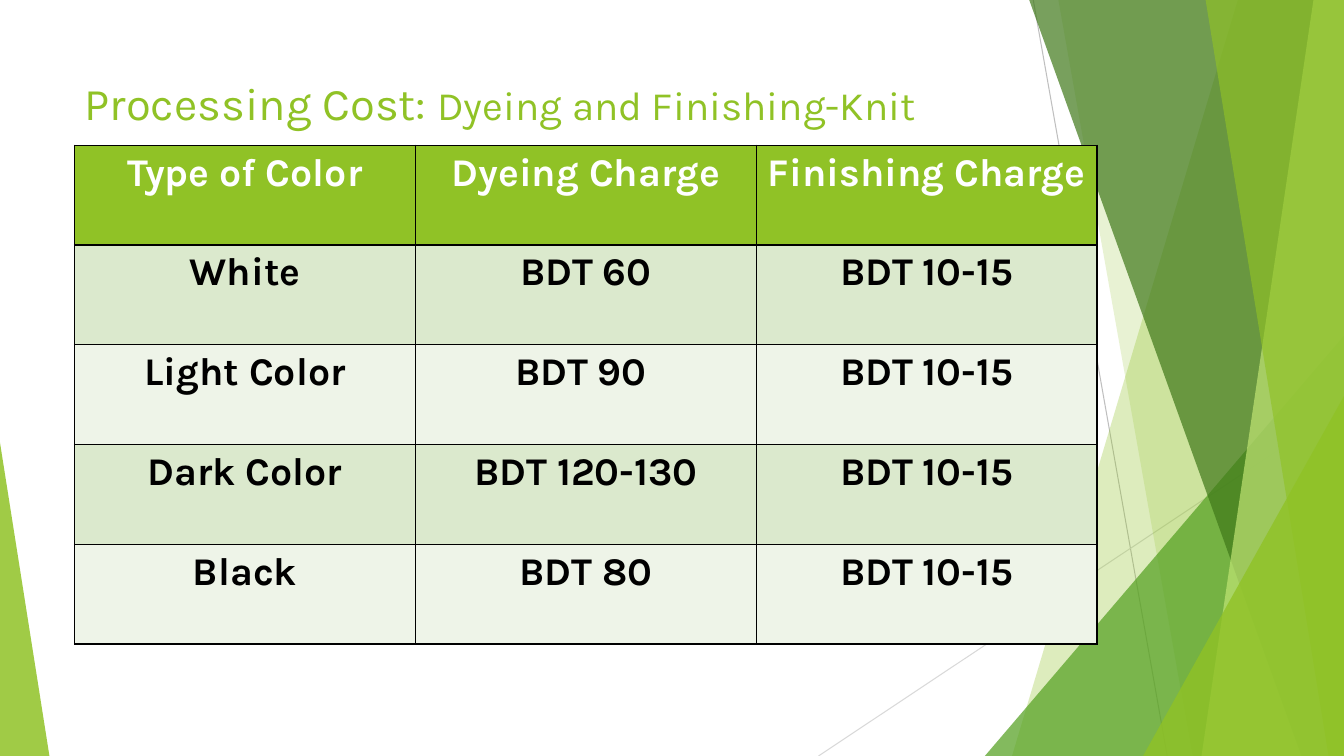
from lxml import etree
from pptx import Presentation, util as u
from pptx.dml.color import RGBColor
from pptx.enum import shapes, text
from pptx.oxml import ns

WHITE = RGBColor(0xFF, 0xFF, 0xFF)
BLACK = RGBColor(0x00, 0x00, 0x00)
LIME = RGBColor(0x90, 0xC2, 0x26)
PALE_LIME = RGBColor(0xC0, 0xE4, 0x74)
LEAF = RGBColor(0x54, 0xA0, 0x21)
FOREST = RGBColor(0x3F, 0x78, 0x19)
DARK_BAND = RGBColor(0xDB, 0xE9, 0xCD)
LIGHT_BAND = RGBColor(0xEE, 0xF4, 0xE8)
SILVER = RGBColor(0xBF, 0xBF, 0xBF)
MIST = RGBColor(0xD9, 0xD9, 0xD9)

CHARGES = [
    ("Type of Color", "Dyeing Charge", "Finishing Charge"),
    ("White", "BDT 60", "BDT 10-15"),
    ("Light Color", "BDT 90 ", "BDT 10-15"),
    ("Dark Color", "BDT 120-130", "BDT 10-15"),
    ("Black", "BDT 80", "BDT 10-15"),
]


class SlideBuilder:
    font_name = "Karla"

    def __init__(self, presentation):
        self.width = presentation.slide_width
        self.height = presentation.slide_height
        self.slide = presentation.slides.add_slide(presentation.slide_layouts[5])
        self.shapes = self.slide.shapes

    def x(self, percent):
        return u.Emu(round(self.width * percent / 100))

    def y(self, percent):
        return u.Emu(round(self.height * percent / 100))

    def box(self, left, top, width, height):
        return self.x(left), self.y(top), self.x(width), self.y(height)

    def paint(self, shape, color, opacity):
        shape.shadow.inherit = False
        shape.line.fill.background()
        shape.fill.solid()
        shape.fill.fore_color.rgb = color
        fill = shape.fill._xPr.find(ns.qn("a:solidFill"))
        etree.SubElement(fill[0], ns.qn("a:alpha"), val=str(opacity * 1000))

    def line(self, start, end, color):
        connector = self.shapes.add_connector(
            shapes.MSO_CONNECTOR.STRAIGHT,
            self.x(start[0]), self.y(start[1]), self.x(end[0]), self.y(end[1]))
        connector.line.color.rgb = color
        connector.line.width = u.Pt(0.75)
        etree.SubElement(connector._element.spPr, ns.qn("a:effectLst"))

    def ribbon(self, top_left, bottom_left, color, opacity):
        builder = self.shapes.build_freeform(self.x(top_left), 0)
        builder.add_line_segments([
            (self.width, 0), (self.width, self.height),
            (self.x(bottom_left), self.height)])
        self.paint(builder.convert_to_shape(), color, opacity)

    def triangle(self, left, top, width, apex, color, opacity):
        shape = self.shapes.add_shape(
            shapes.MSO_SHAPE.ISOSCELES_TRIANGLE, *self.box(left, top, width, 100 - top))
        shape.adjustments[0] = apex
        self.paint(shape, color, opacity)

    def run(self, paragraph, words, size, color, bold=False):
        run = paragraph.add_run()
        run.text = words
        run.font.name = self.font_name
        run.font.size = u.Pt(size)
        run.font.bold = bold
        run.font.color.rgb = color

    def title(self, box, pieces):
        title = self.shapes.title
        title.left, title.top, title.width, title.height = self.box(*box)
        frame = title.text_frame
        frame.word_wrap = True
        frame.auto_size = text.MSO_AUTO_SIZE.NONE
        frame.vertical_anchor = text.MSO_ANCHOR.BOTTOM
        frame.margin_bottom = u.Inches(0.01)
        paragraph = frame.paragraphs[0]
        paragraph.alignment = text.PP_ALIGN.LEFT
        for words, size in pieces:
            self.run(paragraph, words, size, LIME)
        self.shapes._spTree.append(title._element)

    def border(self, cell):
        properties = cell._tc.get_or_add_tcPr()
        for position, side in enumerate(("lnL", "lnR", "lnT", "lnB")):
            edge = etree.Element(ns.qn(f"a:{side}"), w=str(u.Pt(1)))
            fill = etree.SubElement(edge, ns.qn("a:solidFill"))
            etree.SubElement(fill, ns.qn("a:srgbClr"), val=str(BLACK))
            properties.insert(position, edge)

    def table(self, box, rows):
        table = self.shapes.add_table(len(rows), len(rows[0]), *self.box(*box)).table
        for row_index, row in enumerate(rows):
            header = row_index == 0
            fill = LIME if header else (LIGHT_BAND, DARK_BAND)[row_index % 2]
            for column_index, words in enumerate(row):
                cell = table.cell(row_index, column_index)
                cell.fill.solid()
                cell.fill.fore_color.rgb = fill
                self.border(cell)
                paragraph = cell.text_frame.paragraphs[0]
                paragraph.alignment = text.PP_ALIGN.CENTER
                self.run(paragraph, words, 28, WHITE if header else BLACK, True)


def main():
    presentation = Presentation()
    presentation.slide_width = u.Inches(13.33)
    presentation.slide_height = u.Inches(7.5)
    builder = SlideBuilder(presentation)

    builder.line((76.88, 0), (86.85, 100), SILVER)
    builder.line((100, 53.73), (60.9, 100), MIST)
    builder.ribbon(92.1, 75.3, LIME, 30)
    builder.ribbon(78.75, 88.73, LIME, 20)
    builder.triangle(73.28, 44.4, 26.72, 1, LEAF, 72)
    builder.ribbon(76.58, 96.83, FOREST, 70)
    builder.ribbon(97.73, 89.4, PALE_LIME, 70)
    builder.ribbon(89.7, 98.85, LIME, 65)
    builder.triangle(85.05, 52.4, 14.95, 1, LIME, 80)
    builder.triangle(0, 58.53, 3.68, 0, LIME, 85)

    builder.title((5.55, 8.93, 70.5, 8.4), [
        ("Processing Cost: ", 32.4), ("Dyeing and Finishing-Knit", 28.8)])
    builder.table((5.55, 19.2, 76.07, 66), CHARGES)
    presentation.save("out.pptx")


if __name__ == "__main__":
    main()
